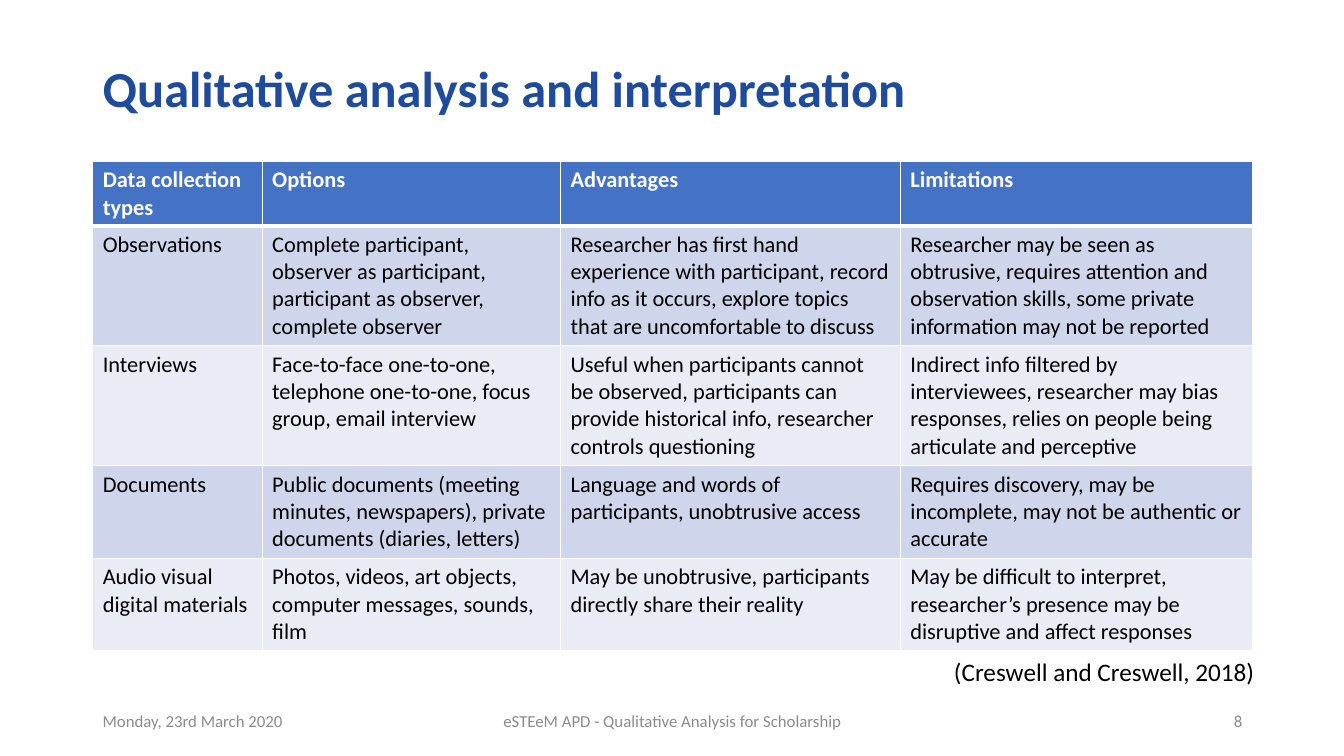
from pptx import Presentation
from pptx.dml.color import RGBColor
from pptx.enum.text import MSO_ANCHOR, PP_ALIGN
from pptx.oxml.ns import qn
from pptx.util import Inches, Pt
from lxml.etree import SubElement

FONT = "Calibri"
COLORS = {
    "title": "1E4B9B",
    "header": "4472C4",
    "odd_row": "CFD5EA",
    "even_row": "E9EBF5",
    "white": "FFFFFF",
    "text": "000000",
    "footer": "8C8C8C",
}
COLUMN_WIDTHS = [1.68, 2.96, 3.37, 3.49]
ROW_HEIGHTS = [0.64, 1.19, 1.19, 0.92, 0.92]
ROWS = [
    ["Data collection types", "Options", "Advantages", "Limitations"],
    [
        "Observations",
        "Complete participant, observer as participant, participant as observer, complete observer",
        "Researcher has first hand experience with participant, record info as it occurs, "
        "explore topics that are uncomfortable to discuss",
        "Researcher may be seen as obtrusive, requires attention and observation skills, "
        "some private information may not be reported",
    ],
    [
        "Interviews",
        "Face-to-face one-to-one, telephone one-to-one, focus group, email interview",
        "Useful when participants cannot be observed, participants can provide historical info, "
        "researcher controls questioning",
        "Indirect info filtered by interviewees, researcher may bias responses, "
        "relies on people being articulate and perceptive",
    ],
    [
        "Documents",
        "Public documents (meeting minutes, newspapers), private documents (diaries, letters)",
        "Language and words of participants, unobtrusive access",
        "Requires discovery, may be incomplete, may not be authentic or accurate",
    ],
    [
        "Audio visual digital materials",
        "Photos, videos, art objects, computer messages, sounds, film",
        "May be unobtrusive, participants directly share their reality",
        "May be difficult to interpret, researcher’s presence may be disruptive and affect responses",
    ],
]


def add_span(para, text, size, color, bold=False):
    span = para.add_run()
    span.text = text
    span.font.name = FONT
    span.font.size = Pt(size)
    span.font.bold = bold
    span.font.color.rgb = RGBColor.from_string(COLORS[color])


def add_text(page, text, left, top, width, height, size, color,
             align=PP_ALIGN.LEFT, anchor=MSO_ANCHOR.MIDDLE, bold=False):
    box = page.shapes.add_textbox(Inches(left), Inches(top), Inches(width), Inches(height))
    frame = box.text_frame
    frame.word_wrap = True
    frame.vertical_anchor = anchor
    para = frame.paragraphs[0]
    para.alignment = align
    add_span(para, text, size, color, bold)
    return para


def set_borders(cell, top, bottom):
    properties = cell._tc.get_or_add_tcPr()
    for side, width in {"L": 1, "R": 1, "T": top, "B": bottom}.items():
        line = SubElement(properties, qn(f"a:ln{side}"), w=str(Pt(width)))
        fill = SubElement(line, qn("a:solidFill"))
        SubElement(fill, qn("a:srgbClr"), val=COLORS["white"])


def fill_cell(cell, text, row_index):
    is_header = row_index == 0
    set_borders(cell, 3 if row_index == 1 else 1, 3 if is_header else 1)
    fill_name = "header" if is_header else "odd_row" if row_index % 2 else "even_row"
    cell.fill.solid()
    cell.fill.fore_color.rgb = RGBColor.from_string(COLORS[fill_name])
    add_span(cell.text_frame.paragraphs[0], text, 16,
             "white" if is_header else "text", is_header)


def add_methods_table(page):
    frame = page.shapes.add_table(
        len(ROWS), len(COLUMN_WIDTHS), Inches(0.92), Inches(1.6),
        Inches(sum(COLUMN_WIDTHS)), Inches(sum(ROW_HEIGHTS)))
    table = frame.table
    for column, width in zip(table.columns, COLUMN_WIDTHS):
        column.width = Inches(width)
    for row_index, (row, height) in enumerate(zip(table.rows, ROW_HEIGHTS)):
        row.height = Inches(height)
        for cell, text in zip(row.cells, ROWS[row_index]):
            fill_cell(cell, text, row_index)


def main():
    deck = Presentation()
    deck.slide_width = Inches(13.33)
    deck.slide_height = Inches(7.5)
    page = deck.slides.add_slide(deck.slide_layouts[6])

    title = add_text(page, "Qualitative analysis and interpretation",
                     0.92, 0.4, 11.5, 0.89, 36, "title", bold=True)
    title.line_spacing = 1.08
    title.space_after = Pt(3)
    add_methods_table(page)

    footers = [
        ("Monday, 23rd March 2020", 0.92, 3, PP_ALIGN.LEFT),
        ("eSTEeM APD - Qualitative Analysis for Scholarship", 4.42, 4.5, PP_ALIGN.CENTER),
        ("8", 9.42, 3, PP_ALIGN.RIGHT),
    ]
    for text, left, width, align in footers:
        add_text(page, text, left, 6.95, width, 0.4, 12, "footer", align)
    add_text(page, "(Creswell and Creswell, 2018)", 9.29, 6.46, 3.25, 0.4, 18, "text",
             PP_ALIGN.RIGHT, MSO_ANCHOR.TOP)
    deck.save("out.pptx")


if __name__ == "__main__":
    main()
